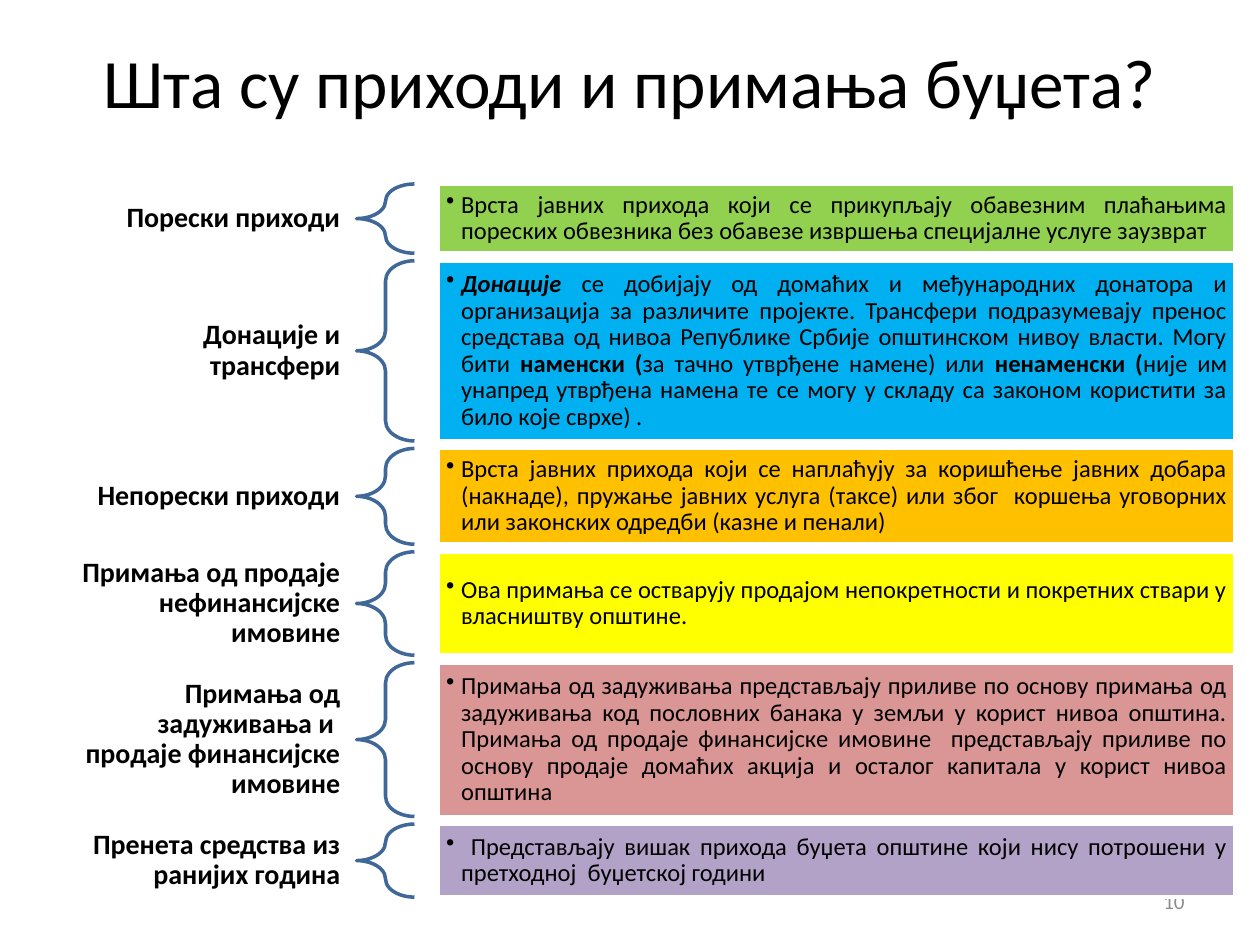
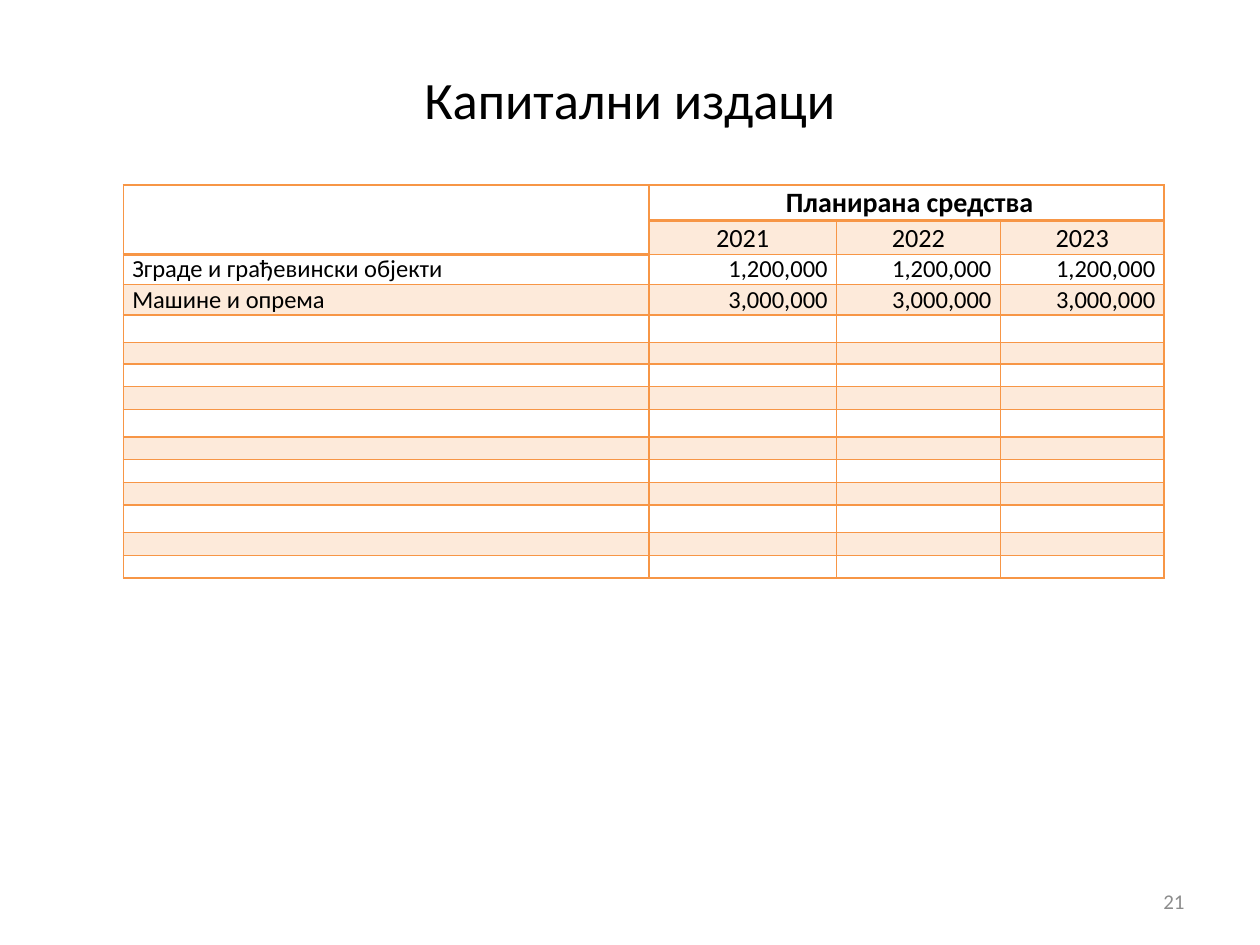
from pptx import Presentation
from pptx.dml.color import RGBColor
from pptx.enum.shapes import MSO_SHAPE
from pptx.enum.text import MSO_ANCHOR, MSO_AUTO_SIZE, PP_ALIGN
from pptx.oxml.xmlchemy import OxmlElement
from pptx.util import Inches, Pt

LEFT, CENTER, RIGHT, JUSTIFY = PP_ALIGN.LEFT, PP_ALIGN.CENTER, PP_ALIGN.RIGHT, PP_ALIGN.JUSTIFY
MIDDLE, BOTTOM = MSO_ANCHOR.MIDDLE, MSO_ANCHOR.BOTTOM
BRACE, RECTANGLE = MSO_SHAPE.LEFT_BRACE, MSO_SHAPE.RECTANGLE
NO_AUTOFIT = MSO_AUTO_SIZE.NONE
TITLE_ONLY = 5

FONT = "Calibri"
BLACK, WHITE, GRAY = "000000", "FFFFFF", "8C8C8C"
BRACE_BLUE, ORANGE, PALE_ORANGE = "3F6797", "F79646", "FDEADA"

PLAIN, BOLD, BOLD_ITALIC = (False, False), (True, False), (True, True)
ROW_GAP = 0.06
REVENUES = [
    ("Порески приходи", 0.35, 0.55, "92D050", [
        ("Врста јавних прихода који се прикупљају обавезним плаћањима пореских "
         "обвезника без обавезе извршења специјалне услуге заузврат", PLAIN)]),
    ("Донације и трансфери", 0.58, 1.43, "00B0F0", [
        ("Донације ", BOLD_ITALIC),
        ("се добијају од домаћих и међународних донатора и организација за различите "
         "пројекте. Трансфери подразумевају пренос средстава од нивоа Републике Србије "
         "општинском нивоу власти. Могу бити ", PLAIN),
        ("наменски (", BOLD),
        ("за тачно утврђене намене) или ", PLAIN),
        ("ненаменски (", BOLD),
        ("није им унапред утврђена намена те се могу у складу са законом користити "
         "за било које сврхе) .", PLAIN)]),
    ("Непорески приходи", 0.35, 0.76, "FFC000", [
        ("Врста јавних прихода који се наплаћују за коришћење јавних добара (накнаде), "
         "пружање јавних услуга (таксе) или због  коршења уговорних или законских "
         "одредби (казне и пенали)", PLAIN)]),
    ("Примања од продаје нефинансијске имовине", 0.82, 0.82, "FFFF00", [
        ("Ова примања се остварују продајом непокретности и покретних ствари у "
         "власништву општине.", PLAIN)]),
    ("Примања од задуживања и  продаје финансијске имовине", 1.08, 1.22, "D99694", [
        ("Примања од задуживања представљају приливе по основу примања од задуживања "
         "код пословних банака у земљи у корист нивоа општина. Примања од продаје "
         "финансијске имовине  представљају приливе по основу продаје домаћих акција и "
         "осталог капитала у корист нивоа општина", PLAIN)]),
    ("Пренета средства из ранијих година", 0.58, 0.58, "B3A2C7", [
        (" Представљају вишак прихода буџета општине који нису потрошени у претходној  "
         "буџетској години", PLAIN)]),
]

COLUMN_WIDTHS = [4.17, 1.49, 1.3, 1.3]
ROW_HEIGHTS = [0.28, 0.27, 0.24, 0.24, 0.22, 0.17, 0.18, 0.18,
               0.22, 0.18, 0.18, 0.18, 0.22, 0.18, 0.18]
EXPENSES = [
    ["", " Планирана средства", "", ""],
    ["", "2021", "2022", "2023"],
    ["Зграде и грађевински објекти"] + ["1,200,000"] * 3,
    ["Машине и опрема"] + ["3,000,000"] * 3,
]


def rgb(code):
    """Turn a hex string into a colour."""
    return RGBColor.from_string(code)


def box_inches(*lengths):
    """Convert lengths to Inches."""
    return [Inches(length) for length in lengths]


def style_run(run, size, color=BLACK, bold=False, italic=False):
    """Format one run."""
    font = run.font
    font.name, font.size, font.bold, font.italic = FONT, Pt(size), bold, italic
    font.color.rgb = rgb(color)


def prepare_frame(frame, horizontal=0.1, vertical=0.05):
    """Set wrapping, anchor and insets of a text frame."""
    frame.word_wrap = True
    frame.auto_size = NO_AUTOFIT
    frame.vertical_anchor = MIDDLE
    frame.margin_left = frame.margin_right = Inches(horizontal)
    frame.margin_top = frame.margin_bottom = Inches(vertical)


def add_label(slide, box, text, size, color=BLACK, bold=False, horizontal=0.1, spacing=1.0):
    """Add a right-aligned text box."""
    frame = slide.shapes.add_textbox(*box_inches(*box)).text_frame
    prepare_frame(frame, horizontal)
    frame.text = text
    paragraph = frame.paragraphs[0]
    paragraph.alignment, paragraph.line_spacing = RIGHT, spacing
    style_run(paragraph.runs[0], size, color, bold)


def add_titled_slide(deck, title, title_height, title_size, number):
    """Add a slide with its title and page number."""
    slide = deck.slides.add_slide(deck.slide_layouts[TITLE_ONLY])
    heading = slide.shapes.title
    heading.left, heading.top, heading.width, heading.height = box_inches(
        0.5, 0.3, 9, title_height)
    prepare_frame(heading.text_frame)
    heading.text_frame.text = title
    paragraph = heading.text_frame.paragraphs[0]
    paragraph.alignment = CENTER
    style_run(paragraph.runs[0], title_size)
    add_label(slide, (7.17, 6.95, 2.33, 0.4), number, 12, GRAY)
    return slide


def add_plain_shape(slide, kind, box, line_color):
    """Add an outlined preset shape without shadow."""
    shape = slide.shapes.add_shape(kind, *box_inches(*box))
    shape.shadow.inherit = False
    shape.line.color.rgb = rgb(line_color)
    shape.line.width = Pt(2)
    return shape


def set_bullet(paragraph):
    """Give a paragraph a hanging round bullet."""
    properties = paragraph._p.get_or_add_pPr()
    properties.set("marL", str(Inches(0.12)))
    properties.set("indent", str(-Inches(0.12)))
    bullet = OxmlElement("a:buChar")
    bullet.set("char", "•")
    properties.append(bullet)


def add_revenue_row(slide, box, label, label_height, color, description):
    """Add a label, its brace and the coloured description."""
    left, top, width, height = box
    label_top = top + (height - label_height) / 2
    add_label(slide, (left, label_top, 2.32, label_height), label, 16,
              bold=True, horizontal=0.12, spacing=0.9)
    brace = add_plain_shape(slide, BRACE, (left + 2.33, top, 0.46, height), BRACE_BLUE)
    brace.adjustments[0] = 0.35
    brace.fill.background()
    panel = add_plain_shape(slide, RECTANGLE, (left + 2.98, top, width - 2.98, height), WHITE)
    panel.fill.solid()
    panel.fill.fore_color.rgb = rgb(color)
    prepare_frame(panel.text_frame, 0.06, 0.06)
    paragraph = panel.text_frame.paragraphs[0]
    paragraph.alignment, paragraph.line_spacing = JUSTIFY, 0.9
    set_bullet(paragraph)
    for text, (bold, italic) in description:
        run = paragraph.add_run()
        run.text = text
        style_run(run, 14, bold=bold, italic=italic)


def add_revenues(slide, left, top, width):
    """Stack the revenue rows with equal gaps."""
    for label, label_height, height, color, description in REVENUES:
        add_revenue_row(slide, (left, top, width, height),
                        label, label_height, color, description)
        top += height + ROW_GAP


def set_borders(cell, row, column):
    """Draw orange cell borders, thicker under the header."""
    def horizontal_width(edge):
        """Return the line width of a horizontal grid edge."""
        return 2 if edge == 1 or (edge == 2 and column == 0) else 1

    widths = {"L": 1, "R": 1, "T": horizontal_width(row), "B": horizontal_width(row + 1)}
    for index, (side, width) in enumerate(widths.items()):
        line = OxmlElement(f"a:ln{side}")
        line.set("w", str(Pt(width)))
        fill = OxmlElement("a:solidFill")
        color = OxmlElement("a:srgbClr")
        color.set("val", ORANGE)
        fill.append(color)
        line.append(fill)
        cell._tc.get_or_add_tcPr().insert(index, line)


def fill_cell(cell, row, column, text):
    """Write and format one table cell."""
    cell.margin_left = cell.margin_right = Inches(0.07)
    cell.margin_top = cell.margin_bottom = 0
    cell.vertical_anchor = BOTTOM if row < 2 else MIDDLE
    if row % 2 and column + row > 1:
        cell.fill.solid()
        cell.fill.fore_color.rgb = rgb(PALE_ORANGE)
    else:
        cell.fill.background()
    set_borders(cell, row, column)
    paragraph = cell.text_frame.paragraphs[0]
    if text:
        paragraph.text = text
        paragraph.alignment = CENTER if row < 2 else RIGHT if column else LEFT
        style_run(paragraph.runs[0], {0: 16, 1: 15}.get(row, 14), bold=row == 0)
    else:
        ending = paragraph._p.get_or_add_endParaRPr()
        ending.set("sz", "800")


def add_expense_table(slide, left, top):
    """Add the table of planned capital expenses."""
    table = slide.shapes.add_table(
        len(ROW_HEIGHTS), len(COLUMN_WIDTHS),
        *box_inches(left, top, sum(COLUMN_WIDTHS), sum(ROW_HEIGHTS))).table
    table.first_row = table.horz_banding = False
    for column, width in zip(table.columns, COLUMN_WIDTHS):
        column.width = Inches(width)
    blank_rows = [[""] * len(COLUMN_WIDTHS)] * (len(ROW_HEIGHTS) - len(EXPENSES))
    for row, texts in enumerate(EXPENSES + blank_rows):
        table.rows[row].height = Inches(ROW_HEIGHTS[row])
        for column, text in enumerate(texts):
            fill_cell(table.cell(row, column), row, column, text)
    table.cell(0, 0).merge(table.cell(1, 0))
    table.cell(0, 1).merge(table.cell(0, 3))


def main():
    """Build and save the presentation."""
    deck = Presentation()
    deck.slide_width, deck.slide_height = box_inches(10, 7.5)
    revenues = add_titled_slide(deck, "Шта су приходи и примања буџета?", 0.68, 39.6, "10")
    add_revenues(revenues, 0.5, 1.46, 9.3)
    expenses = add_titled_slide(deck, "Капитални издаци", 0.96, 30, "21")
    add_expense_table(expenses, 0.98, 1.47)
    deck.save("out.pptx")


if __name__ == "__main__":
    main()
